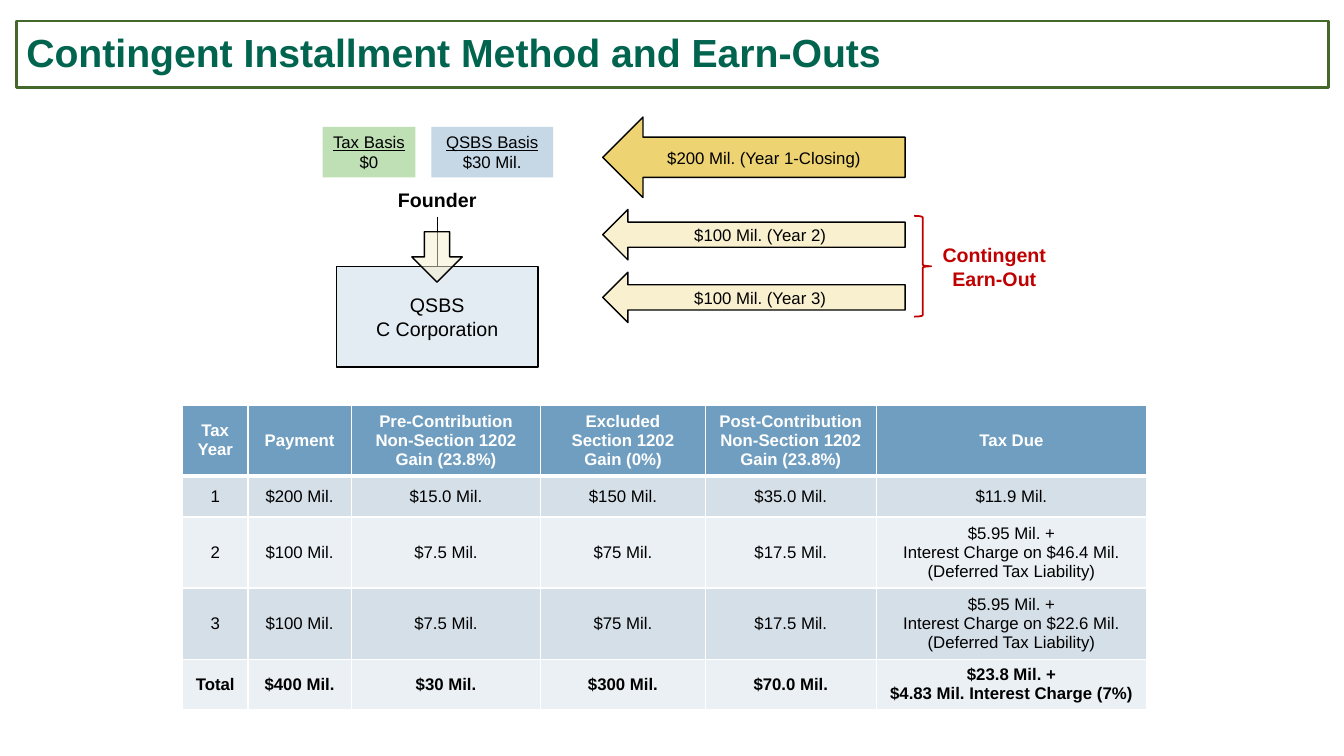
from dataclasses import dataclass

from lxml import etree
from pptx import Presentation
from pptx.dml.color import RGBColor
from pptx.enum.shapes import MSO_CONNECTOR, MSO_SHAPE
from pptx.enum.text import MSO_ANCHOR, PP_ALIGN
from pptx.oxml.ns import qn
from pptx.util import Cm, Pt

RECTANGLE = MSO_SHAPE.RECTANGLE
LEFT_ARROW = MSO_SHAPE.LEFT_ARROW
DOWN_ARROW = MSO_SHAPE.DOWN_ARROW
RIGHT_BRACE = MSO_SHAPE.RIGHT_BRACE
STRAIGHT = MSO_CONNECTOR.STRAIGHT
MIDDLE = MSO_ANCHOR.MIDDLE
LEFT = PP_ALIGN.LEFT
CENTER = PP_ALIGN.CENTER


@dataclass(frozen=True)
class Theme:
    font: str = "Arial"
    title_size: int = 28
    label_size: int = 14
    body_size: int = 12
    black: str = "000000"
    white: str = "FFFFFF"
    title: str = "00644F"
    title_frame: str = "43682A"
    tax_basis: str = "BFDFB5"
    qsbs_basis: str = "C6D8E6"
    corporation: str = "E2ECF2"
    closing: str = "EDD372"
    later: str = "F9F0D0"
    earn_out: str = "C00000"
    header: str = "709EC0"
    bands: tuple = ("D5DFE8", "EBF0F4")


THEME = Theme()

TITLE = "Contingent Installment Method and Earn-Outs"
BASES = [
    ("Tax Basis\n$0", 8.13, 2.34, THEME.tax_basis),
    ("QSBS Basis\n$30 Mil.", 10.87, 3.07, THEME.qsbs_basis),
]
PAYMENTS = [
    ("$200 Mil. (Year 1-Closing)", 2.95, 2.03, THEME.closing),
    ("$100 Mil. (Year 2)", 5.28, 1.27, THEME.later),
    ("$100 Mil. (Year 3)", 6.86, 1.27, THEME.later),
]
COLUMN_WIDTHS = [1.65, 2.6, 4.78, 4.14, 4.32, 6.8]
ROW_HEIGHTS = [1.76, 1.04, 1.79, 1.79, 1.27]
TAX_ROWS = [
    ("Tax\nYear", "Payment", "Pre-Contribution\nNon-Section 1202\nGain (23.8%)",
     "Excluded\nSection 1202\nGain (0%)",
     "Post-Contribution\nNon-Section 1202\nGain (23.8%)", "Tax Due"),
    ("1", "$200 Mil.", "$15.0 Mil.", "$150 Mil.", "$35.0 Mil.", "$11.9 Mil."),
    ("2", "$100 Mil.", "$7.5 Mil.", "$75 Mil.", "$17.5 Mil.",
     "$5.95 Mil. +\nInterest Charge on $46.4 Mil.\n(Deferred Tax Liability)"),
    ("3", "$100 Mil.", "$7.5 Mil.", "$75 Mil.", "$17.5 Mil.",
     "$5.95 Mil. +\nInterest Charge on $22.6 Mil.\n(Deferred Tax Liability)"),
    ("Total", "$400 Mil.", "$30 Mil.", "$300 Mil.", "$70.0 Mil.",
     "$23.8 Mil. +\n$4.83 Mil. Interest Charge (7%)"),
]
FOUNDER_CENTER = 11.02


def rgb(color):
    return RGBColor.from_string(color)


def write(frame, text, size=THEME.body_size, color=THEME.black, bold=False,
          underline_first=False, align=CENTER, spacing=None):
    for index, line in enumerate(text.split("\n")):
        para = frame.paragraphs[0] if index == 0 else frame.add_paragraph()
        para.alignment = align
        para.line_spacing = spacing
        span = para.add_run()
        span.text = line
        span.font.name = THEME.font
        span.font.size = Pt(size)
        span.font.bold = bold
        span.font.underline = underline_first and index == 0
        span.font.color.rgb = rgb(color)


def set_insets(frame, inset):
    frame.margin_left = frame.margin_right = Cm(inset)
    frame.margin_top = frame.margin_bottom = Cm(inset)


def add_box(page, kind, left, top, width, height, fill=None, line=None, weight=1):
    box = page.shapes.add_shape(kind, Cm(left), Cm(top), Cm(width), Cm(height))
    box.shadow.inherit = False
    if fill:
        box.fill.solid()
        box.fill.fore_color.rgb = rgb(fill)
    else:
        box.fill.background()
    if line:
        box.line.color.rgb = rgb(line)
        box.line.width = Pt(weight)
    else:
        box.line.fill.background()
    box.text_frame.vertical_anchor = MIDDLE
    set_insets(box.text_frame, 0.13)
    return box


def add_label(page, text, left, top, width, height, **style):
    label = page.shapes.add_textbox(Cm(left), Cm(top), Cm(width), Cm(height))
    label.text_frame.word_wrap = True
    label.text_frame.vertical_anchor = MIDDLE
    set_insets(label.text_frame, 0)
    write(label.text_frame, text, **style)
    return label


def set_border(cell, side, weight):
    border = etree.SubElement(cell._tc.get_or_add_tcPr(), qn("a:" + side), w=str(Pt(weight)))
    fill = etree.SubElement(border, qn("a:solidFill"))
    etree.SubElement(fill, qn("a:srgbClr"), val=THEME.white)


def add_title(page):
    title = page.shapes.title
    title.left, title.top, title.width, title.height = Cm(0.41), Cm(0.53), Cm(33.07), Cm(1.68)
    title.line.color.rgb = rgb(THEME.title_frame)
    title.line.width = Pt(2)
    title.text_frame.vertical_anchor = MIDDLE
    write(title.text_frame, TITLE, size=THEME.title_size, color=THEME.title,
          bold=True, align=LEFT, spacing=0.9)


def add_founder(page):
    for text, left, width, fill in BASES:
        basis = add_box(page, RECTANGLE, left, 3.2, width, 1.27, fill)
        write(basis.text_frame, text, underline_first=True)
    corporation = add_box(page, RECTANGLE, FOUNDER_CENTER - 2.54, 6.71, 5.08, 2.54,
                          THEME.corporation, THEME.black)
    write(corporation.text_frame, "QSBS\nC Corporation", size=THEME.label_size)
    founder = add_label(page, "Founder", FOUNDER_CENTER - 1.25, 4.6, 2.5, 0.86,
                        size=THEME.label_size, bold=True)
    link = page.shapes.add_connector(STRAIGHT, 0, 0, 0, 0)
    link.begin_connect(founder, 2)
    link.end_connect(corporation, 0)
    link.line.color.rgb = rgb(THEME.black)
    link.line.width = Pt(1)
    etree.SubElement(link._element.spPr, qn("a:effectLst"))
    arrow = add_box(page, DOWN_ARROW, FOUNDER_CENTER - 0.64, 5.84, 1.27, 1.27,
                    THEME.later, THEME.black)
    fill_color = arrow._element.spPr.find(qn("a:solidFill")).find(qn("a:srgbClr"))
    etree.SubElement(fill_color, qn("a:alpha"), val="50000")


def add_payments(page):
    for text, top, height, fill in PAYMENTS:
        arrow = add_box(page, LEFT_ARROW, 15.19, top, 7.62, height, fill, THEME.black)
        write(arrow.text_frame, text)
    add_box(page, RIGHT_BRACE, 23.04, 5.44, 0.43, 2.54, line=THEME.earn_out, weight=1.25)
    add_label(page, "Contingent\nEarn-Out", 23.5, 6, 3.12, 1.45,
              size=THEME.label_size, color=THEME.earn_out, bold=True)


def add_tax_table(page):
    table = page.shapes.add_table(len(TAX_ROWS), len(COLUMN_WIDTHS), Cm(4.6), Cm(10.21),
                                  Cm(sum(COLUMN_WIDTHS)), Cm(sum(ROW_HEIGHTS))).table
    for column, width in zip(table.columns, COLUMN_WIDTHS):
        column.width = Cm(width)
    for row, height in zip(table.rows, ROW_HEIGHTS):
        row.height = Cm(height)
    for row_index, texts in enumerate(TAX_ROWS):
        header = row_index == 0
        total = row_index == len(TAX_ROWS) - 1
        weights = {"lnL": 1, "lnR": 1, "lnT": 3 if row_index == 1 else 1, "lnB": 3 if header else 1}
        for column_index, text in enumerate(texts):
            cell = table.cell(row_index, column_index)
            for side, weight in weights.items():
                set_border(cell, side, weight)
            cell.fill.solid()
            cell.fill.fore_color.rgb = rgb(THEME.header if header else THEME.bands[(row_index - 1) % 2])
            cell.vertical_anchor = MIDDLE
            write(cell.text_frame, text, bold=header or total,
                  color=THEME.white if header else THEME.black)


def main():
    deck = Presentation()
    deck.slide_width, deck.slide_height = Cm(33.87), Cm(19.05)
    page = deck.slides.add_slide(deck.slide_layouts[5])
    add_title(page)
    add_founder(page)
    add_payments(page)
    add_tax_table(page)
    deck.save("out.pptx")


if __name__ == "__main__":
    main()
